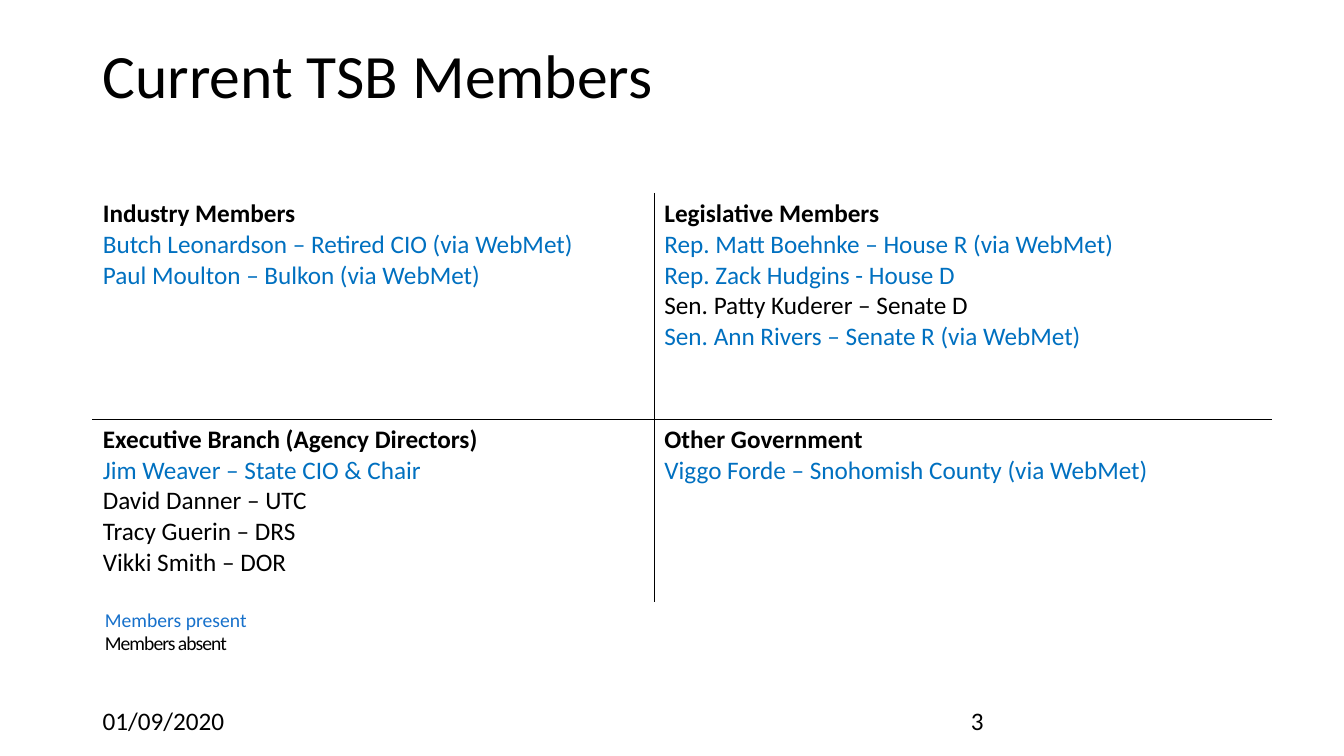
from dataclasses import dataclass
from lxml.etree import SubElement
from pptx import Presentation
from pptx.dml.color import RGBColor
from pptx.enum.text import MSO_ANCHOR
from pptx.oxml.ns import qn
from pptx.util import Inches, Pt


@dataclass(frozen=True)
class Theme:
    font: str = "Calibri"
    black: str = "000000"
    white: str = "FFFFFF"
    blue: str = "0070C0"
    key: str = "1771CB"
    title: int = 44
    body: int = 18
    small: int = 14


THEME = Theme()

# Each group: heading, then (member, present)
GROUPS = [
    [
        ("Industry Members", [
            ("Butch Leonardson – Retired CIO (via WebMet)", True),
            ("Paul Moulton – Bulkon (via WebMet)", True),
        ]),
        ("Legislative Members", [
            ("Rep. Matt Boehnke – House R (via WebMet)", True),
            ("Rep. Zack Hudgins - House D", True),
            ("Sen. Patty Kuderer – Senate D", False),
            ("Sen. Ann Rivers – Senate R (via WebMet)", True),
        ]),
    ],
    [
        ("Executive Branch (Agency Directors)", [
            ("Jim Weaver – State CIO & Chair", True),
            ("David Danner – UTC", False),
            ("Tracy Guerin – DRS", False),
            ("Vikki Smith – DOR", False),
        ]),
        ("Other Government", [
            ("Viggo Forde – Snohomish County (via WebMet)", True),
        ]),
    ],
]


def add_line(frame, text, size, color=THEME.black, bold=False):
    """Fill the empty first paragraph, or add one below."""
    para = frame.paragraphs[0]
    if para.runs:
        para = frame.add_paragraph()
    para.add_run().text = text
    font = para.font
    font.name, font.size, font.bold = THEME.font, Pt(size), bold
    font.color.rgb = RGBColor.from_string(color)
    return para


def add_box(slide, left, top, width, height, anchor=MSO_ANCHOR.TOP):
    box = slide.shapes.add_textbox(
        Inches(left), Inches(top), Inches(width), Inches(height))
    frame = box.text_frame
    frame.word_wrap = True
    frame.vertical_anchor = anchor
    return frame


def add_edge(cell, tag, color):
    props = cell._tc.get_or_add_tcPr()
    edge = SubElement(props, qn(tag), w=str(Pt(1)))
    fill = SubElement(edge, qn("a:solidFill"))
    SubElement(fill, qn("a:srgbClr"), val=color)


def fill_cell(cell, row, col):
    # Inner edges are black, outer edges white
    inner = {"a:lnL": col == 1, "a:lnR": col == 0,
             "a:lnT": row == 1, "a:lnB": row == 0}
    for tag, dark in inner.items():
        add_edge(cell, tag, THEME.black if dark else THEME.white)
    cell.fill.background()

    head, members = GROUPS[row][col]
    frame = cell.text_frame
    add_line(frame, head, THEME.body, bold=True)
    for name, present in members:
        add_line(frame, name, THEME.body,
                 THEME.blue if present else THEME.black)


def add_grid(slide):
    widths, heights = (5.57, 6.12), (2.24, 1.82)
    table = slide.shapes.add_table(
        2, 2, Inches(0.92), Inches(1.92),
        Inches(sum(widths)), Inches(sum(heights))).table
    table.first_row = table.horz_banding = False
    for col, width in enumerate(widths):
        table.columns[col].width = Inches(width)
    for row, height in enumerate(heights):
        table.rows[row].height = Inches(height)
        for col in range(len(widths)):
            fill_cell(table.cell(row, col), row, col)


def add_key(slide):
    frame = add_box(slide, 0.84, 5.87, 2.55, 0.78)
    frame.word_wrap = False
    frame.margin_left = frame.margin_right = Inches(0.2)
    frame.margin_top = frame.margin_bottom = Inches(0.16)
    add_line(frame, "Members present", THEME.small, THEME.key)
    absent = add_line(frame, "Members absent", THEME.small)
    absent.space_after = Pt(6)
    # Tighter letters
    absent.runs[0].font._element.set("spc", "-70")


def main():
    deck = Presentation()
    deck.slide_width, deck.slide_height = Inches(13.33), Inches(7.5)
    slide = deck.slides.add_slide(deck.slide_layouts[6])

    # Title
    title = add_box(slide, 0.92, 0.4, 11.5, 1.45)
    add_line(title, "Current TSB Members", THEME.title).line_spacing = 0.9

    # Members and colour key
    add_grid(slide)
    add_key(slide)

    # Footer
    for text, left, width in (("01/09/2020", 0.92, 3), ("3", 9.53, 0.95)):
        foot = add_box(slide, left, 6.95, width, 0.4, MSO_ANCHOR.MIDDLE)
        add_line(foot, text, THEME.body)

    deck.save("out.pptx")


if __name__ == "__main__":
    main()
